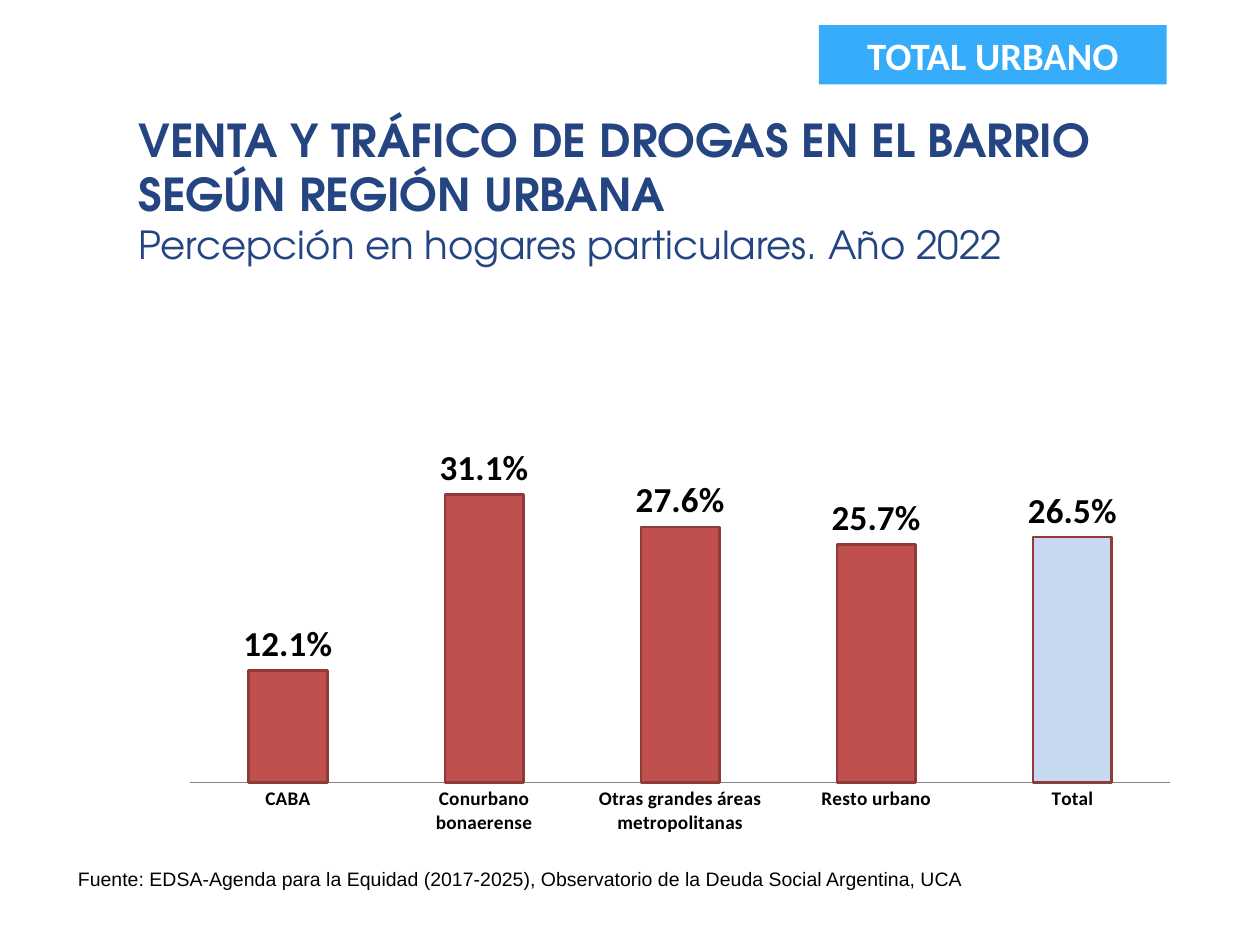
from lxml import etree
from pptx import Presentation
from pptx.chart.data import CategoryChartData
from pptx.dml.color import RGBColor
from pptx.enum.chart import XL_CHART_TYPE, XL_LABEL_POSITION, XL_TICK_MARK
from pptx.enum.shapes import MSO_SHAPE
from pptx.enum.text import MSO_ANCHOR, MSO_AUTO_SIZE, PP_ALIGN
from pptx.oxml.ns import qn
from pptx.util import Inches, Pt

COLUMN = XL_CHART_TYPE.COLUMN_CLUSTERED
OUTSIDE = XL_LABEL_POSITION.OUTSIDE_END
NO_TICK = XL_TICK_MARK.NONE
RECT = MSO_SHAPE.RECTANGLE
MIDDLE, TOP = MSO_ANCHOR.MIDDLE, MSO_ANCHOR.TOP
NO_FIT = MSO_AUTO_SIZE.NONE
LEFT, CENTER = PP_ALIGN.LEFT, PP_ALIGN.CENTER

NAVY = RGBColor(0x24, 0x45, 0x82)
SKY = RGBColor(0x37, 0xAC, 0xFB)
WHITE = RGBColor(0xFF, 0xFF, 0xFF)
BLACK = RGBColor(0, 0, 0)
RED = RGBColor(0xC0, 0x50, 0x4D)
MAROON = RGBColor(0x8E, 0x3B, 0x39)
PALE = RGBColor(0xC6, 0xD9, 0xF1)
GRAY = RGBColor(0x86, 0x86, 0x86)

HEAD = "TeX Gyre Adventor"
BODY = "Calibri"
TITLE = [
    ("VENTA Y TRÁFICO DE DROGAS EN EL BARRIO SEGÚN REGIÓN URBANA", 25.9, True),
    ("Percepción en hogares particulares. Año 2022", 22.1, False),
]
TAG = "TOTAL URBANO"
SOURCE = ("Fuente: EDSA-Agenda para la Equidad (2017-2025), "
          "Observatorio de la Deuda Social Argentina, UCA")
RATES = {
    "CABA": 0.121,
    "Conurbano bonaerense": 0.311,
    "Otras grandes áreas metropolitanas": 0.276,
    "Resto urbano": 0.257,
    "Total": 0.265,
}
PLOT = {"x": 0.017, "y": 0.022, "w": 0.962, "h": 0.837}


def style(font, name, size, color, bold=False):
    font.name, font.size, font.bold = name, Pt(size), bold
    font.color.rgb = color


def write(shape, lines, name, color, align=LEFT, anchor=TOP):
    frame = shape.text_frame
    frame.word_wrap = True
    frame.auto_size = NO_FIT
    frame.vertical_anchor = anchor
    frame.text = "\n".join(text for text, _, _ in lines)
    for para, (_, size, bold) in zip(frame.paragraphs, lines):
        para.alignment = align
        style(para.font, name, size, color, bold)


def place_plot(chart):
    area = chart._chartSpace.chart.plotArea
    for old in area.findall(qn("c:layout")):
        area.remove(old)
    layout = etree.Element(qn("c:layout"))
    area.insert(0, layout)
    manual = etree.SubElement(layout, qn("c:manualLayout"))
    parts = [("layoutTarget", "inner"), ("xMode", "edge"), ("yMode", "edge")]
    for tag, val in parts + list(PLOT.items()):
        etree.SubElement(manual, qn("c:" + tag)).set("val", str(val))


def add_bars(slide):
    data = CategoryChartData(number_format="0.0%")
    data.categories = list(RATES)
    data.add_series("Series 1", list(RATES.values()))
    chart = slide.shapes.add_chart(
        COLUMN, Inches(1.37), Inches(2.44), Inches(8.09), Inches(4.39), data).chart
    chart.has_legend = chart.has_title = False
    style(chart.font, BODY, 18, BLACK)
    place_plot(chart)

    value = chart.value_axis
    value.visible = value.has_major_gridlines = False
    value.minimum_scale, value.maximum_scale = 0, 0.5
    names = chart.category_axis
    names.major_tick_mark = names.minor_tick_mark = NO_TICK
    names.format.line.color.rgb = GRAY
    style(names.tick_labels.font, BODY, 11, BLACK, True)

    plot = chart.plots[0]
    plot.vary_by_categories = False
    plot.gap_width, plot.overlap = 150, -25
    bars = plot.series[0]
    total = bars.points[len(RATES) - 1]
    for part, color in ((bars, RED), (total, PALE)):
        part.format.fill.solid()
        part.format.fill.fore_color.rgb = color
        part.format.line.color.rgb = MAROON
        part.format.line.width = Pt(1.5)

    labels = bars.data_labels
    labels.show_value = True
    labels.position = OUTSIDE
    labels.number_format, labels.number_format_is_linked = "0.0%", False
    style(labels.font, BODY, 20, BLACK, True)


def main():
    deck = Presentation()
    deck.slide_width, deck.slide_height = Inches(10), Inches(7.5)
    slide = deck.slides.add_slide(deck.slide_layouts[5])
    add_bars(slide)

    title = slide.shapes.title
    title.left, title.top = Inches(1), Inches(0.84)
    title.width, title.height = Inches(8.29), Inches(1.34)
    write(title, TITLE, HEAD, NAVY)

    tag = slide.shapes.add_shape(
        RECT, Inches(6.5), Inches(0.2), Inches(2.76), Inches(0.47))
    tag.shadow.inherit = False
    tag.fill.solid()
    tag.fill.fore_color.rgb = SKY
    tag.line.fill.background()
    write(tag, [(TAG, 22.1, True)], BODY, WHITE, CENTER, MIDDLE)

    source = slide.shapes.add_textbox(
        Inches(0.52), Inches(6.83), Inches(9.24), Inches(0.29))
    write(source, [(SOURCE, 11.1, False)], "Arial", BLACK)
    deck.save("out.pptx")


if __name__ == "__main__":
    main()
